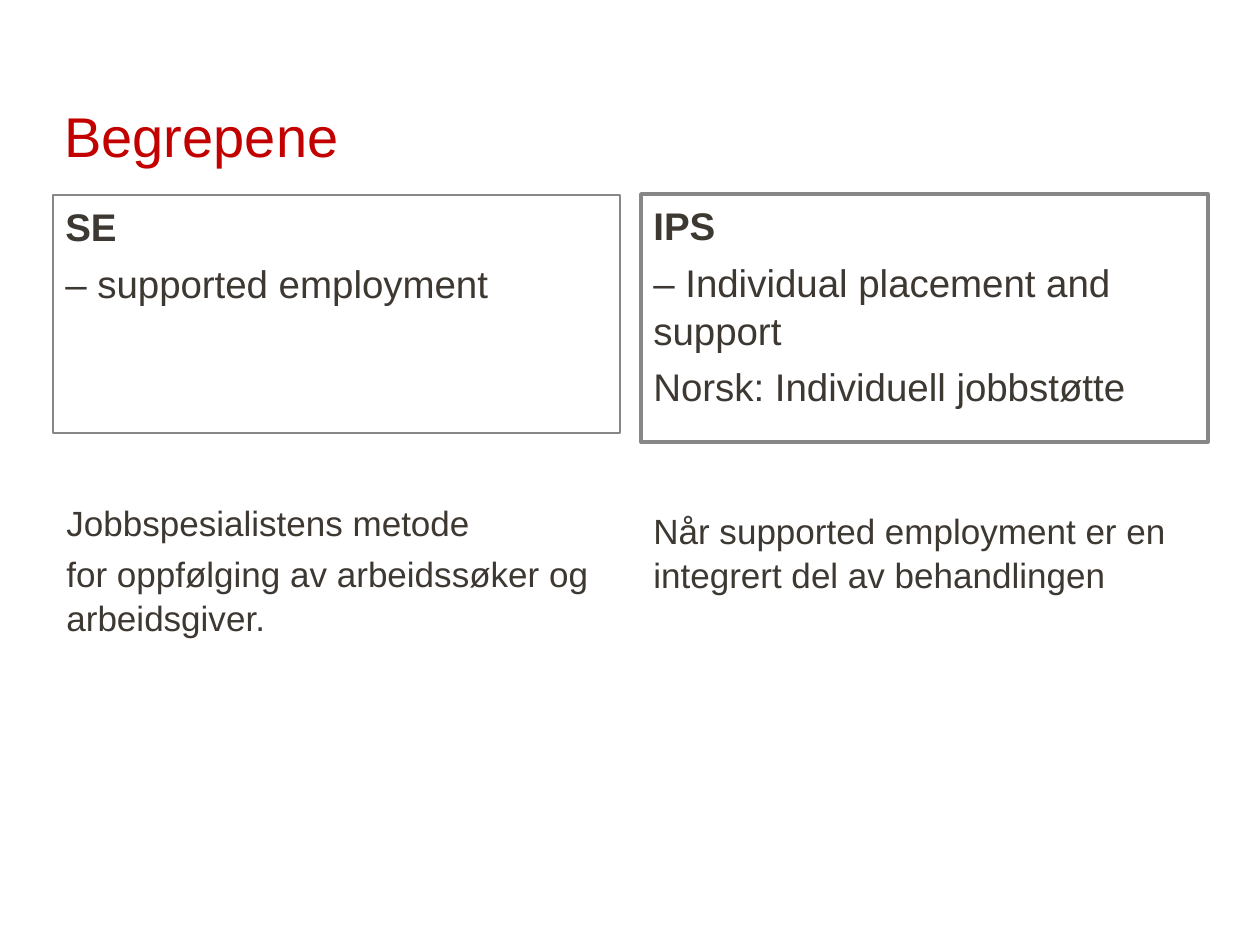
from pptx import Presentation, util as u
from pptx.dml.color import RGBColor
from pptx.enum import shapes, text

PX = u.Inches(1) / 126
INK, RED, GREY = "3E3832", "C30000", "878787"


def px(*vals):
    return [round(v * PX) for v in vals]


def color(code):
    return RGBColor.from_string(code)


def write(frame, lines, size, code=INK, lead=1.05):
    """Fill a frame with (words, bold) lines, one paragraph each."""
    frame.word_wrap = True
    for i, (words, bold) in enumerate(lines):
        para = frame.add_paragraph() if i else frame.paragraphs[0]
        para.alignment = text.PP_ALIGN.LEFT
        para.line_spacing = lead
        para.space_before = u.Pt(size * 0.2 if i else 0)
        run = para.add_run()
        run.text = words
        font = run.font
        font.name, font.size, font.bold = "Arial", u.Pt(size), bold
        font.color.rgb = color(code)


def title(slide, box, words):
    frame = slide.shapes.add_textbox(*px(*box)).text_frame
    frame.vertical_anchor = text.MSO_ANCHOR.BOTTOM
    write(frame, [(words, False)], 32, RED, 1.0)


def term(slide, box, width, name, *lines):
    """Framed box with a bold term over its meaning."""
    rect = slide.shapes.add_shape(shapes.MSO_SHAPE.RECTANGLE, *px(*box))
    rect.shadow.inherit = False
    rect.fill.background()
    rect.line.color.rgb = color(GREY)
    rect.line.width = u.Pt(width)
    rect.text_frame.vertical_anchor = text.MSO_ANCHOR.TOP
    write(rect.text_frame, [(name, True)] + [(s, False) for s in lines], 22)


def note(slide, box, *lines):
    frame = slide.shapes.add_textbox(*px(*box)).text_frame
    write(frame, [(s, False) for s in lines], 20)


def main():
    deck = Presentation()
    deck.slide_width, deck.slide_height = px(1260, 945)
    slide = deck.slides.add_slide(deck.slide_layouts[6])
    left, right, wide = 53, 641, 567
    term(slide, (left, 195, wide, 238), 0.75,
         "SE", "– supported employment")
    term(slide, (right, 194, wide, 248), 2,
         "IPS", "– Individual placement and support",
         "Norsk: Individuell jobbstøtte")
    note(slide, (left + 1, 493, wide, 371), "Jobbspesialistens metode",
         "for oppfølging av arbeidssøker og arbeidsgiver.")
    note(slide, (right, 501, wide, 363),
         "Når supported employment er en integrert del av behandlingen")
    title(slide, (52, 25, 1156, 150), "Begrepene")
    deck.save("out.pptx")


if __name__ == "__main__":
    main()
